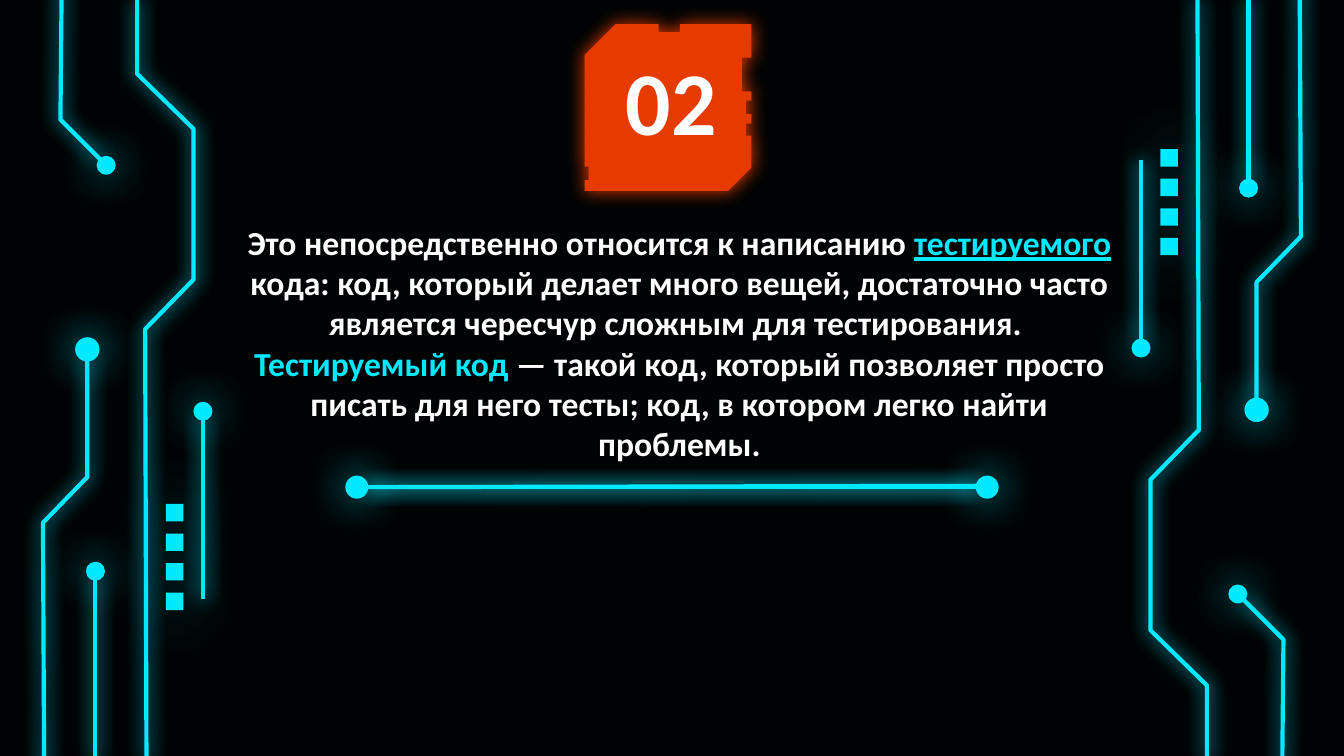
import pptx
import pptx.util
import pptx.dml.color
import pptx.enum.shapes
import pptx.enum.text
import pptx.oxml
import pptx.oxml.ns

WIDE = pptx.util.Inches(10)
HIGH = WIDE * 9 // 16
CELL = WIDE / 100
CYAN, RED, WHITE, BLACK = "00E9FF", "E63B00", "FFFFFF", "000304"
KIND = pptx.enum.shapes.MSO_SHAPE


def tone(hue):
    return pptx.dml.color.RGBColor.from_string(hue)


def emu(cells):
    return round(cells * CELL)


def glow(item, hue, blur, alpha=100, dist=0):
    item._element.spPr.append(pptx.oxml.parse_xml(
        f'<a:effectLst {pptx.oxml.ns.nsdecls("a")}>'
        f'<a:outerShdw blurRad="{pptx.util.Pt(blur)}" dist="{pptx.util.Pt(dist)}" dir="0" '
        f'algn="ctr" rotWithShape="0"><a:srgbClr val="{hue}">'
        f'<a:alpha val="{alpha * 1000}"/></a:srgbClr></a:outerShdw></a:effectLst>'))


def stroke(item, hue, width):
    item.line.color.rgb = tone(hue)
    item.line.width = pptx.util.Pt(width)


def paint(item, hue):
    item.fill.solid()
    item.fill.fore_color.rgb = tone(hue)


def outline(slide, points, close):
    first, *rest = [(emu(x), emu(y)) for x, y in points]
    pen = slide.shapes.build_freeform(*first)
    pen.add_line_segments(rest, close=close)
    return pen.convert_to_shape()


def trace(slide, points):
    item = outline(slide, points, False)
    item.fill.background()
    stroke(item, CYAN, 2.25)
    glow(item, CYAN, 10.1)


def block(slide, kind, x, y, size):
    item = slide.shapes.add_shape(
        kind, emu(x - size / 2), emu(y - size / 2), emu(size), emu(size))
    paint(item, CYAN)
    return item


def dot(slide, x, y, size):
    item = block(slide, KIND.OVAL, x, y, size)
    stroke(item, CYAN, 1.5)
    glow(item, CYAN, 22.5)


def square(slide, x, y, size):
    item = block(slide, KIND.RECTANGLE, x, y, size)
    item.line.fill.background()
    glow(item, CYAN, 36, 70, 1.5)


def circuit(slide, left, top, turn):
    def spot(x, y):
        return left + turn * x, top + turn * y

    tracks = [
        [(10.9, 56.6), (10.8, 24.5), (14.4, 20.8), (14.4, 9.6), (10.2, 5.5), (10.2, 0)],
        [(7.1, 56.6), (7.1, 42.9)],
        [(4.6, -1.7), (4.5, 8.9), (7.5, 11.9)],
        [(3.3, 59.6), (3.2, 38.9), (6.5, 35.5), (6.5, 26.6)],
        [(15.1, 44.6), (15.1, 31)],
    ]
    for track in tracks:
        trace(slide, [spot(x, y) for x, y in track])
    for x, y, size in [(6.5, 26, 1.6), (7.9, 12.3, 1.2), (15.1, 30.6, 1.2), (7.1, 42.5, 1.2)]:
        dot(slide, *spot(x, y), size)
    for row in range(4):
        square(slide, *spot(13, 38.15 + 2.2 * row), 1.3)


def badge(slide, left, top):
    points = [
        (2.3, 0), (0, 2.3), (0, 10.6), (0.3, 10.6), (0.3, 11.6), (0, 11.6), (0, 12.4),
        (10.7, 12.4), (12.4, 10.7), (12.4, 8.3), (12, 8.3), (12, 7.4), (12.4, 7.4),
        (12.4, 6.7), (12, 6.7), (12, 5.7), (12.4, 5.7), (12.4, 5), (11.7, 5),
        (11.7, 2.5), (12.4, 2.5), (12.4, 0), (7.1, 0), (7.1, 0.6), (5.5, 0.6), (5.5, 0)]
    item = outline(slide, [(left + x, top + y) for x, y in points], True)
    paint(item, RED)
    item.line.fill.background()
    glow(item, RED, 10.1)


def words(slide, left, top, width, height, size, paras, head=1, foot=1):
    frame = slide.shapes.add_textbox(*map(emu, (left, top, width, height))).text_frame
    frame.word_wrap = True
    frame.vertical_anchor = pptx.enum.text.MSO_ANCHOR.MIDDLE
    frame.margin_left = frame.margin_right = emu(1)
    frame.margin_top, frame.margin_bottom = emu(head), emu(foot)
    for spot, runs in enumerate(paras):
        para = frame.add_paragraph() if spot else frame.paragraphs[0]
        para.alignment = pptx.enum.text.PP_ALIGN.CENTER
        for text, hue, under in runs:
            run = para.add_run()
            run.text = text
            run.font.name = "Calibri"
            run.font.size = pptx.util.Pt(size)
            run.font.bold = True
            run.font.underline = under
            run.font.color.rgb = tone(hue)


def rule(slide, left, top, width, size):
    start, end = left + size, left + width - size
    for rise in (0.1, 0):
        item = slide.shapes.add_connector(
            pptx.enum.shapes.MSO_CONNECTOR.STRAIGHT,
            emu(start), emu(top), emu(end), emu(top - rise))
        stroke(item, CYAN, 2.25)
        glow(item, CYAN, 10.1)
    for x in (left + size / 2, left + width - size / 2):
        dot(slide, x, top, size)


def main():
    deck = pptx.Presentation()
    deck.slide_width, deck.slide_height = WIDE, HIGH
    slide = deck.slides.add_slide(deck.slide_layouts[6])
    paint(slide.background, BLACK)
    circuit(slide, 0, 0, 1)
    circuit(slide, 100, 56.5, -1)
    badge(slide, 43.5, 1.8)
    words(slide, 17.3, 16.8, 66.5, 20, 18, [
        [("Это непосредственно относится к написанию ", WHITE, False),
         ("тестируемого", CYAN, True),
         (" кода: код, который делает много вещей, достаточно часто является "
          "чересчур сложным для тестирования. ", WHITE, False)],
        [("Тестируемый код", CYAN, False),
         (" — такой код, который позволяет просто писать для него тесты; код, "
          "в котором легко найти проблемы.", WHITE, False)],
    ], head=0, foot=2.6)
    words(slide, 24.1, 2.9, 51.7, 9, 48, [[("02", WHITE, False)]])
    rule(slide, 25.8, 36.25, 48.4, 1.5)
    deck.save("out.pptx")


if __name__ == "__main__":
    main()
